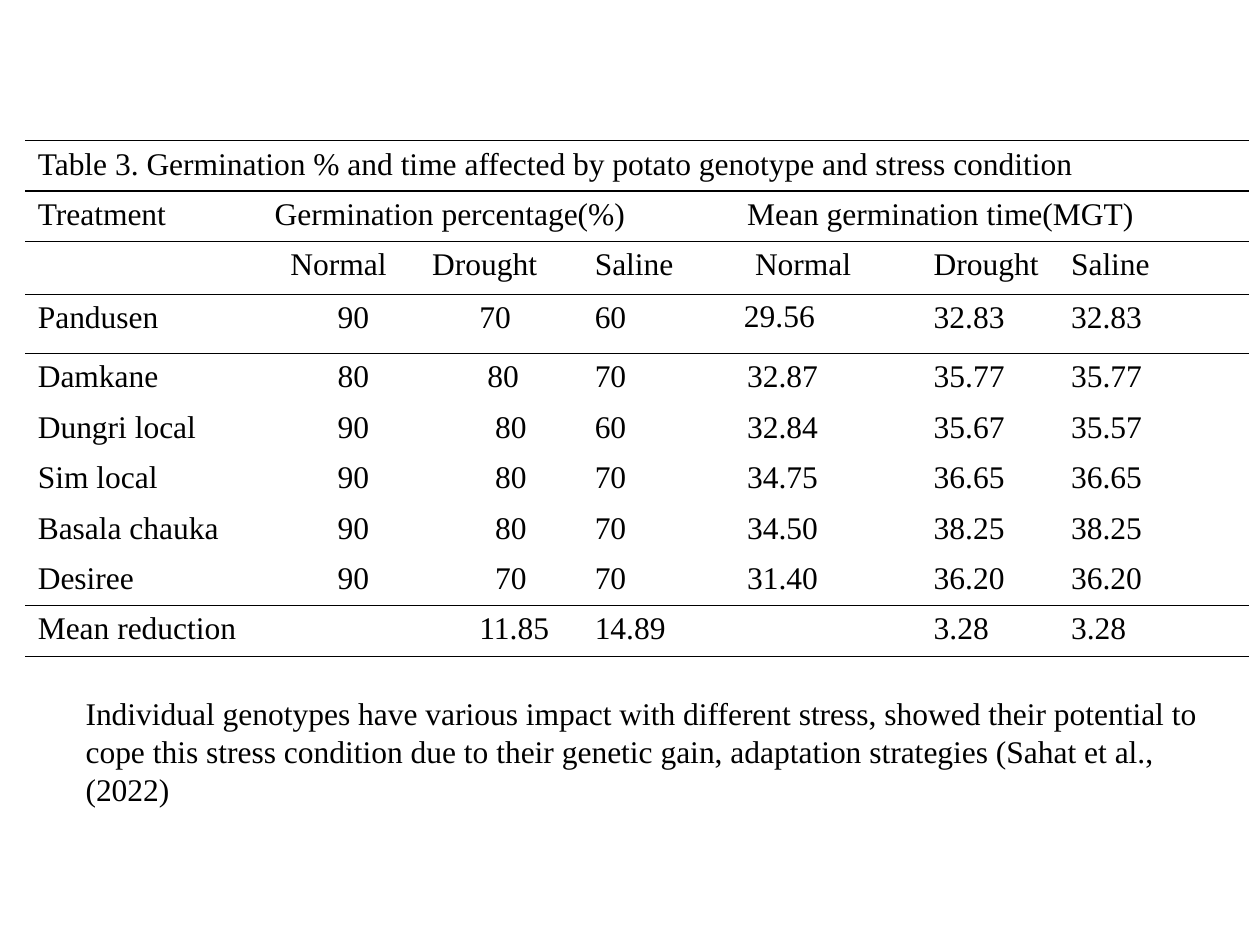
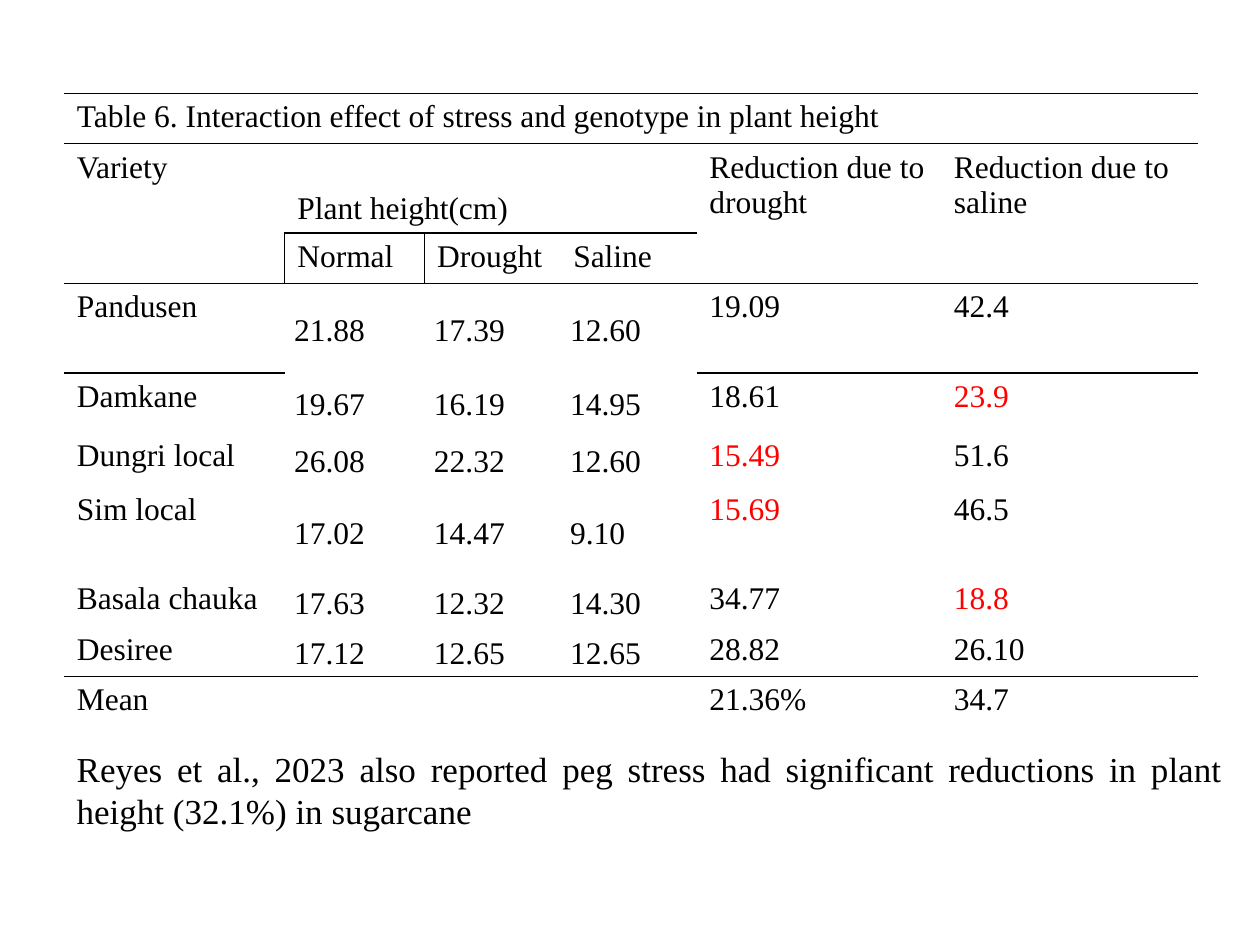
from dataclasses import dataclass

from lxml import etree
from pptx import Presentation
from pptx.dml.color import RGBColor
from pptx.enum import text as tx
from pptx.oxml import ns
from pptx.util import Pt


@dataclass(frozen=True)
class Theme:
    face: str = "Times New Roman"
    ink: str = "000000"
    alert: str = "FF0000"
    body: int = 18
    large: int = 20
    rule: int = 1
    pad: float = 7.2
    space: float = 4.5
    plain: str = "{2D5ABB26-0587-4C30-8999-92F81FD0307C}"  # no style, no grid


THEME = Theme()
TIGHT = dict(margin_left=Pt(5.4), margin_right=Pt(5.4), margin_top=0, margin_bottom=0)
MIDDLE = dict(TIGHT, vertical_anchor=tx.MSO_ANCHOR.MIDDLE)
LOOSE = dict(line_spacing=1.15)
JUST = dict(alignment=tx.PP_ALIGN.JUSTIFY)

GERM = [
    ["Table 3. Germination % and time affected by potato genotype and stress condition"],
    ["Treatment", "Germination percentage(%)", "", "", "Mean germination time(MGT)"],
    ["", "Normal", "Drought", "Saline", "Normal", "Drought", "Saline"],
    ["Pandusen", "90", "70", "60", "29.56", "32.83", "32.83"],
    ["Damkane", "80", "80", "70", "32.87", "35.77", "35.77"],
    ["Dungri local", "90", "80", "60", "32.84", "35.67", "35.57"],
    ["Sim local", "90", "80", "70", "34.75", "36.65", "36.65"],
    ["Basala chauka", "90", "80", "70", "34.50", "38.25", "38.25"],
    ["Desiree", "90", "70", "70", "31.40", "36.20", "36.20"],
    ["Mean reduction", "", "11.85", "14.89", "", "3.28", "3.28"],
]
HEIGHT = [
    ["Table 6. Interaction effect of stress and genotype in plant height"],
    ["Variety", "Plant height(cm)", "", "",
     "Reduction due to drought", "Reduction due to saline"],
    ["", "Normal", "Drought", "Saline"],
    ["Pandusen", "21.88", "17.39", "12.60", "19.09", "42.4"],
    ["Damkane", "19.67", "16.19", "14.95", "18.61", "23.9"],
    ["Dungri local", "26.08", "22.32", "12.60", "15.49", "51.6"],
    ["Sim local", "17.02", "14.47", "9.10", "15.69", "46.5"],
    ["Basala chauka", "17.63", "12.32", "14.30", "34.77", "18.8"],
    ["Desiree", "17.12", "12.65", "12.65", "28.82", "26.10"],
    ["Mean", "", "", "", "21.36%", "34.7"],
]


def apply(item, form):
    for key, value in form.items():
        setattr(item, key, value)


def write(para, words, size=THEME.body, color=THEME.ink, **form):
    apply(para, form)
    run = para.add_run()
    run.text = words
    apply(run.font, dict(name=THEME.face, size=Pt(size)))
    run.font.color.rgb = RGBColor.from_string(color)


def note(slide, box, words, size, **form):
    frame = slide.shapes.add_textbox(*map(Pt, box)).text_frame
    frame.word_wrap = True
    write(frame.paragraphs[0], words, size, **form)


def edge(cell, side):
    """Draw one side (L, T or B) of a cell."""
    props = cell._tc.get_or_add_tcPr()
    line = etree.SubElement(props, ns.qn(f"a:ln{side}"), w=str(Pt(THEME.rule)))
    fill = etree.SubElement(line, ns.qn("a:solidFill"))
    etree.SubElement(fill, ns.qn("a:srgbClr"), val=THEME.ink)


def span(row, first, last):
    """Edges of a rule that lies on top of a row, from both sides of it."""
    cols = range(first, last + 1)
    return {(row, c, "T") for c in cols} | {(row - 1, c, "B") for c in cols}


def grid(slide, spot, cols, rows, data, merges, rules, look, red=()):
    """look(row, col) gives the cell format and the paragraph format."""
    frame = slide.shapes.add_table(len(rows), len(cols), *map(Pt, (*spot, sum(cols), sum(rows))))
    for style in frame.element.iter(ns.qn("a:tableStyleId")):
        style.text = THEME.plain
    table = frame.table
    apply(table, dict(first_row=False, horz_banding=False))
    for col, width in zip(table.columns, cols):
        col.width = Pt(width)
    for row, height in zip(table.rows, rows):
        row.height = Pt(height)
    for r in range(len(rows)):
        for c in range(len(cols)):
            cell = table.cell(r, c)
            for side in "LTB":
                if (r, c, side) in rules:
                    edge(cell, side)
            cell.fill.background()
            words = data[r][c] if c < len(data[r]) else ""
            if words:
                box, para = look(r, c)
                apply(cell, box)
                color = THEME.alert if words in red else THEME.ink
                write(cell.text_frame.paragraphs[0], words, color=color, **para)
    for top, left, low, right in merges:
        table.cell(top, left).merge(table.cell(low, right))


def germ(slide):
    shift = {(2, 1): 2, (2, 4): 1, (3, 2): 6, (4, 2): 7, (9, 2): 6}
    shift.update({(r, 1): 8 for r in range(3, 9)})
    shift.update({(r, 2): 8 for r in range(5, 9)})

    def look(r, c):
        if (r, c) == (3, 4):
            return TIGHT, LOOSE
        return dict(margin_left=Pt(THEME.pad + THEME.space * shift.get((r, c), 0))), {}

    rules = set().union(*(span(r, 0, 6) for r in (0, 1, 3, 9, 10)))
    grid(slide, (14.4, 80.4), [135.4, 90, 92.9, 87.1, 106.6, 78.5, 108.7],
         [28.8, 28.8, 30.2, 33.8] + [28.8] * 6, GERM,
         [(0, 0, 0, 6), (1, 1, 1, 3), (1, 4, 1, 6)], rules, look)
    note(slide, (41.8, 393.1, 653.8, 72.7),
         "Individual genotypes have various impact with different stress, showed their "
         "potential to cope this stress condition due to their genetic gain, adaptation "
         "strategies (Sahat et al., (2022)", THEME.body)


def height(slide):
    def look(r, c):
        if (r, c) == (1, 1):
            return dict(vertical_anchor=tx.MSO_ANCHOR.BOTTOM), {}
        if r < 3 or c == 0:
            return {}, {}
        return (MIDDLE, LOOSE | JUST) if c < 4 else ({}, JUST)

    rules = set().union(*(span(r, 0, 5) for r in (0, 1, 9)))
    rules |= span(2, 1, 3) | span(3, 0, 0) | span(3, 4, 5) | {(1, c, "B") for c in (0, 4, 5)}
    rules.add((2, 1, "L"))
    grid(slide, (36.7, 53.3), [126, 79.9, 77.8, 77.8, 139.7, 146.9],
         [28.8, 51, 28.8, 51.1, 33.8, 31, 51.1, 28.8, 28.8, 28.8], HEIGHT,
         [(0, 0, 0, 5), (1, 0, 2, 0), (1, 1, 1, 3), (1, 4, 2, 4), (1, 5, 2, 5)],
         rules, look, {"23.9", "15.49", "15.69", "18.8"})
    note(slide, (36.7, 423.4, 668.9, 55.4),
         "Reyes et al., 2023 also reported peg stress had significant reductions in plant "
         "height (32.1%) in sugarcane", THEME.large, **JUST)


def main():
    deck = Presentation()
    apply(deck, dict(slide_width=Pt(720), slide_height=Pt(540)))
    for build in (germ, height):
        build(deck.slides.add_slide(deck.slide_layouts[6]))
    deck.save("out.pptx")


if __name__ == "__main__":
    main()
